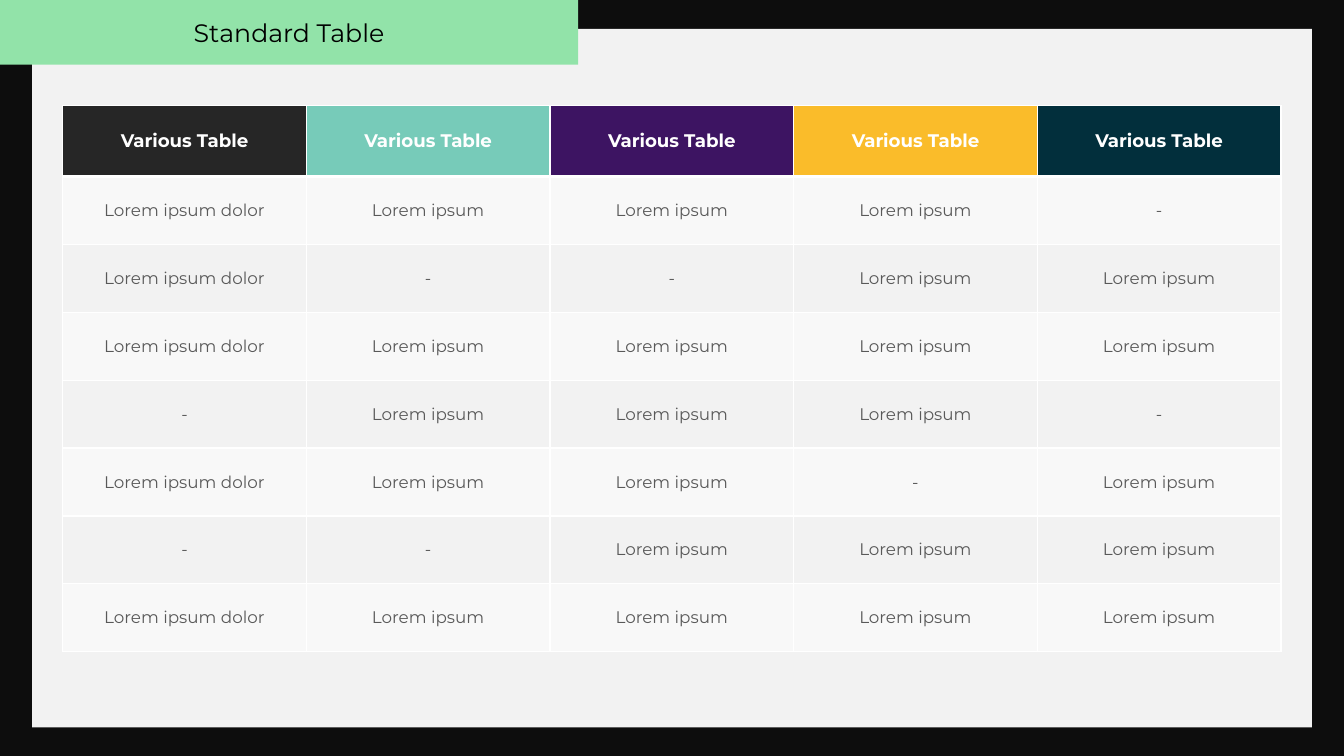
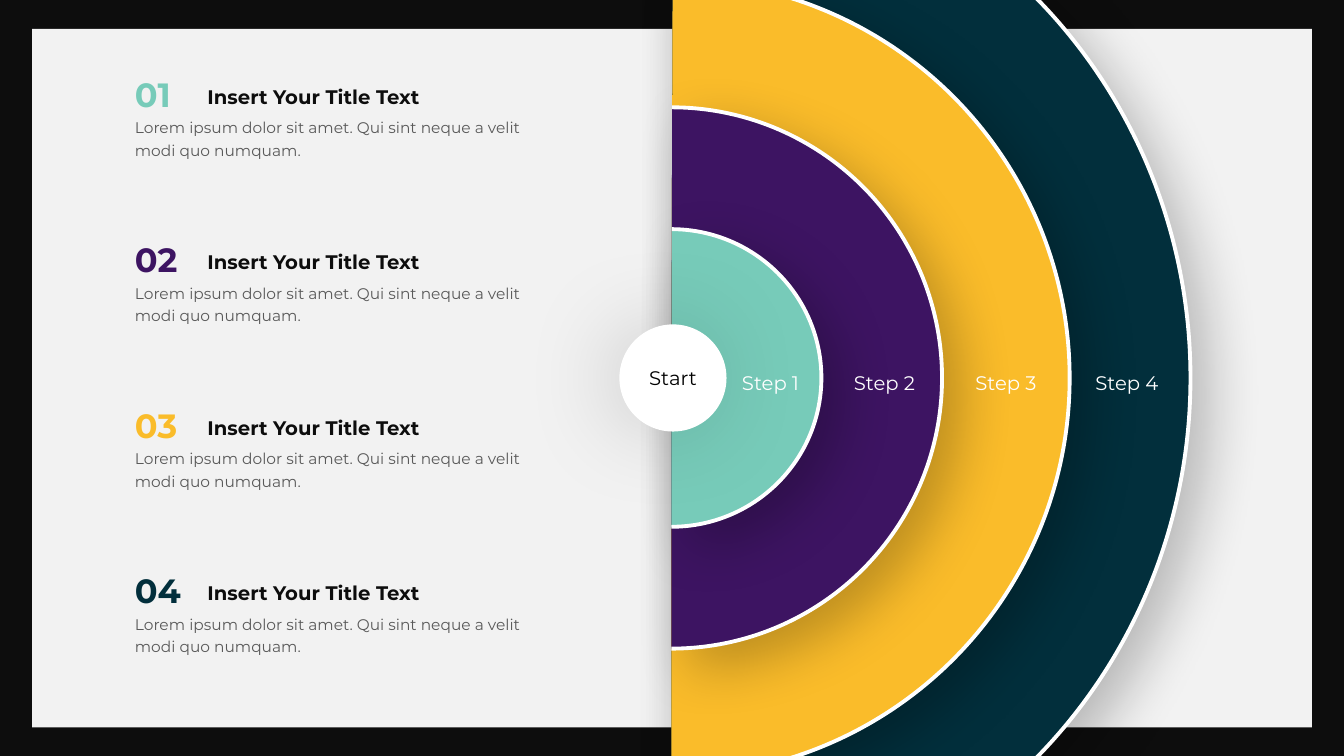
import dataclasses

import pptx
import pptx.dml.color
import pptx.enum.shapes
import pptx.enum.text
import pptx.oxml
import pptx.oxml.ns
import pptx.util

Cm = pptx.util.Cm
Pt = pptx.util.Pt
SHAPE = pptx.enum.shapes.MSO_SHAPE
ALIGN = pptx.enum.text.PP_ALIGN
MIDDLE = pptx.enum.text.MSO_ANCHOR.MIDDLE
qn = pptx.oxml.ns.qn
NAMESPACE = pptx.oxml.ns.nsdecls("a")


@dataclasses.dataclass(frozen=True)
class Theme:
    font: str = "Montserrat"
    frame: str = "0D0D0D"
    panel: str = "F2F2F2"
    white: str = "FFFFFF"
    black: str = "000000"
    body: str = "595959"
    band: str = "92E3A9"
    charcoal: str = "262626"
    accents: tuple = ("77CBB9", "3D1462", "FABC2A", "022F3C")
    title_size: int = 18
    number_size: int = 24
    heading_size: int = 14
    table_head_size: int = 13
    table_body_size: int = 12
    body_size: int = 11


THEME = Theme()
SLIDE_WIDTH, SLIDE_HEIGHT = 33.87, 19.05

LOREM = "Lorem ipsum"
LONG = "Lorem ipsum dolor"
TABLE_HEAD = ["Various Table"] * 5
TABLE_BODY = [
    [LONG, LOREM, LOREM, LOREM, "-"],
    [LONG, "-", "-", LOREM, LOREM],
    [LONG, LOREM, LOREM, LOREM, LOREM],
    ["-", LOREM, LOREM, LOREM, "-"],
    [LONG, LOREM, LOREM, "-", LOREM],
    ["-", "-", LOREM, LOREM, LOREM],
    [LONG, LOREM, LOREM, LOREM, LOREM],
]
ITEM_HEADING = "Insert Your Title Text"
ITEM_BODY = "Lorem ipsum dolor sit amet. Qui sint neque a velit modi quo numquam."
# Height and width of each half ring, then the label's distance from the centre
RINGS = [
    (7.5, 7.56, 2.5),
    (13.64, 13.64, 5.37),
    (20.07, 20.07, 8.43),
    (26.92, 26.16, 11.48),
]


# Shared helpers
def rgb(value):
    return pptx.dml.color.RGBColor.from_string(value)


def write(text_frame, text, size, color, bold=False, align=ALIGN.LEFT, spacing=None):
    text_frame.word_wrap = True
    paragraph = text_frame.paragraphs[0]
    paragraph.text = text
    paragraph.alignment = align
    if spacing:
        paragraph.line_spacing = spacing
    font = paragraph.font
    font.name, font.size, font.bold = THEME.font, Pt(size), bold
    font.color.rgb = rgb(color)


def add_text(slide, left, top, width, height, *content, **style):
    box = slide.shapes.add_textbox(Cm(left), Cm(top), Cm(width), Cm(height))
    write(box.text_frame, *content, **style)


def add_filled(slide, kind, left, top, width, height, color):
    shape = slide.shapes.add_shape(kind, Cm(left), Cm(top), Cm(width), Cm(height))
    shape.shadow.inherit = False
    shape.fill.solid()
    shape.fill.fore_color.rgb = rgb(color)
    shape.line.fill.background()
    return shape


def add_shadow(shape, opacity, blur, distance, angle):
    effects = shape.element.spPr.find(qn("a:effectLst"))
    effects.append(pptx.oxml.parse_xml(
        f'<a:outerShdw {NAMESPACE} blurRad="{Pt(blur)}" dist="{Pt(distance)}" '
        f'dir="{angle * 60000}" algn="ctr" rotWithShape="0">'
        f'<a:srgbClr val="{THEME.black}"><a:alpha val="{opacity * 1000}"/></a:srgbClr>'
        '</a:outerShdw>'))


def add_framed_slide(presentation):
    slide = presentation.slides.add_slide(presentation.slide_layouts[6])
    slide.background.fill.solid()
    slide.background.fill.fore_color.rgb = rgb(THEME.frame)
    add_filled(slide, SHAPE.RECTANGLE, 0.81, 0.73, 32.25, 17.6, THEME.panel)
    return slide


def add_title_band(slide, text):
    band = add_filled(slide, SHAPE.RECTANGLE, 0, 0, 14.57, 1.63, THEME.band)
    band.text_frame.vertical_anchor = MIDDLE
    write(band.text_frame, text, THEME.title_size, THEME.black, align=ALIGN.CENTER)


# Table
def style_cell(cell, color, opacity=100, top=1, bottom=1):
    cell.vertical_anchor = MIDDLE
    cell.margin_left = cell.margin_right = Cm(0.28)
    cell.margin_top = cell.margin_bottom = Cm(0.15)
    cell.fill.solid()
    cell.fill.fore_color.rgb = rgb(color)
    properties = cell._tc.get_or_add_tcPr()
    if opacity < 100:
        properties.find(".//" + qn("a:srgbClr")).append(
            pptx.oxml.parse_xml(f'<a:alpha {NAMESPACE} val="{opacity * 1000}"/>'))
    sides = {"lnL": 1, "lnR": 1, "lnT": top, "lnB": bottom}
    for position, (side, width) in enumerate(sides.items()):
        properties.insert(position, pptx.oxml.parse_xml(
            f'<a:{side} {NAMESPACE} w="{Pt(width)}"><a:solidFill>'
            f'<a:srgbClr val="{THEME.white}"/></a:solidFill></a:{side}>'))


def add_data_table(slide, left, top, column_width, head_height, row_height):
    row_count, column_count = len(TABLE_BODY) + 1, len(TABLE_HEAD)
    table = slide.shapes.add_table(
        row_count, column_count, Cm(left), Cm(top), Cm(column_width * column_count),
        Cm(head_height + row_height * len(TABLE_BODY))).table
    table.horz_banding = False
    for column in table.columns:
        column.width = Cm(column_width)
    for index, row in enumerate(table.rows):
        row.height = Cm(row_height if index else head_height)

    # Header row
    head_colors = (THEME.charcoal, *THEME.accents)
    for index, (text, color) in enumerate(zip(TABLE_HEAD, head_colors)):
        cell = table.cell(0, index)
        style_cell(cell, color, bottom=3)
        write(cell.text_frame, text, THEME.table_head_size, THEME.white,
              bold=True, align=ALIGN.CENTER)

    # Body rows in alternating tints
    for row_index, texts in enumerate(TABLE_BODY, start=1):
        tint = THEME.white if row_index % 2 else THEME.panel
        for column_index, text in enumerate(texts):
            cell = table.cell(row_index, column_index)
            style_cell(cell, tint, opacity=50, top=3 if row_index == 1 else 1)
            write(cell.text_frame, text, THEME.table_body_size, THEME.body,
                  align=ALIGN.CENTER)


# Half rings
def add_half_ring(slide, center_x, center_y, height, width, color):
    # The arc is turned a quarter, so its own width becomes the visible height
    ring = add_filled(slide, SHAPE.ARC, center_x - height / 2, center_y - width / 2,
                      height, width, color)
    ring.rotation = 90
    ring.adjustments[0] = 108.1
    ring.line.color.rgb = rgb(THEME.white)
    ring.line.width = Pt(2.75)
    add_shadow(ring, opacity=23, blur=40, distance=18, angle=45)


def add_step_rings(slide, center_x, center_y):
    for (height, width, _), color in reversed(list(zip(RINGS, THEME.accents))):
        add_half_ring(slide, center_x, center_y, height, width, color)

    # Start disc
    diameter = 2.7
    disc = add_filled(slide, SHAPE.OVAL, center_x + 0.04 - diameter / 2,
                      center_y - diameter / 2, diameter, diameter, THEME.white)
    add_shadow(disc, opacity=15, blur=67, distance=8, angle=180)
    disc.text_frame.vertical_anchor = MIDDLE
    disc.text_frame.margin_left = disc.text_frame.margin_right = 0
    write(disc.text_frame, "Start", THEME.heading_size, THEME.black, align=ALIGN.CENTER)

    # Step labels
    label_width = 2.5
    for number, (_, _, offset) in enumerate(RINGS, start=1):
        add_text(slide, center_x + offset - label_width / 2, center_y - 0.48,
                 label_width, 0.97, f"Step {number}", THEME.heading_size, THEME.white,
                 align=ALIGN.CENTER, spacing=1.3)


# Numbered list
def add_item(slide, left, top, number, color):
    add_text(slide, left, top, 2.36, 1.27, f"{number:02d}", THEME.number_size, color,
             bold=True)
    add_text(slide, left + 1.83, top + 0.28, 7.57, 0.86, ITEM_HEADING,
             THEME.heading_size, THEME.frame, bold=True)
    add_text(slide, left, top + 1.04, 11.1, 1.35, ITEM_BODY, THEME.body_size,
             THEME.body, spacing=1.2)


def add_item_list(slide, left, top, pitch):
    for index, color in enumerate(THEME.accents):
        add_item(slide, left, top + index * pitch, index + 1, color)


# Slides
def build_table_slide(presentation):
    slide = add_framed_slide(presentation)
    add_data_table(slide, 1.58, 2.65, column_width=6.14, head_height=1.8, row_height=1.71)
    add_title_band(slide, "Standard Table")


def build_steps_slide(presentation):
    slide = add_framed_slide(presentation)
    add_step_rings(slide, 16.92, SLIDE_HEIGHT / 2)
    add_item_list(slide, 3.15, 1.73, pitch=4.17)


def main():
    presentation = pptx.Presentation()
    presentation.slide_width = Cm(SLIDE_WIDTH)
    presentation.slide_height = Cm(SLIDE_HEIGHT)
    build_table_slide(presentation)
    build_steps_slide(presentation)
    presentation.save("out.pptx")


if __name__ == "__main__":
    main()
